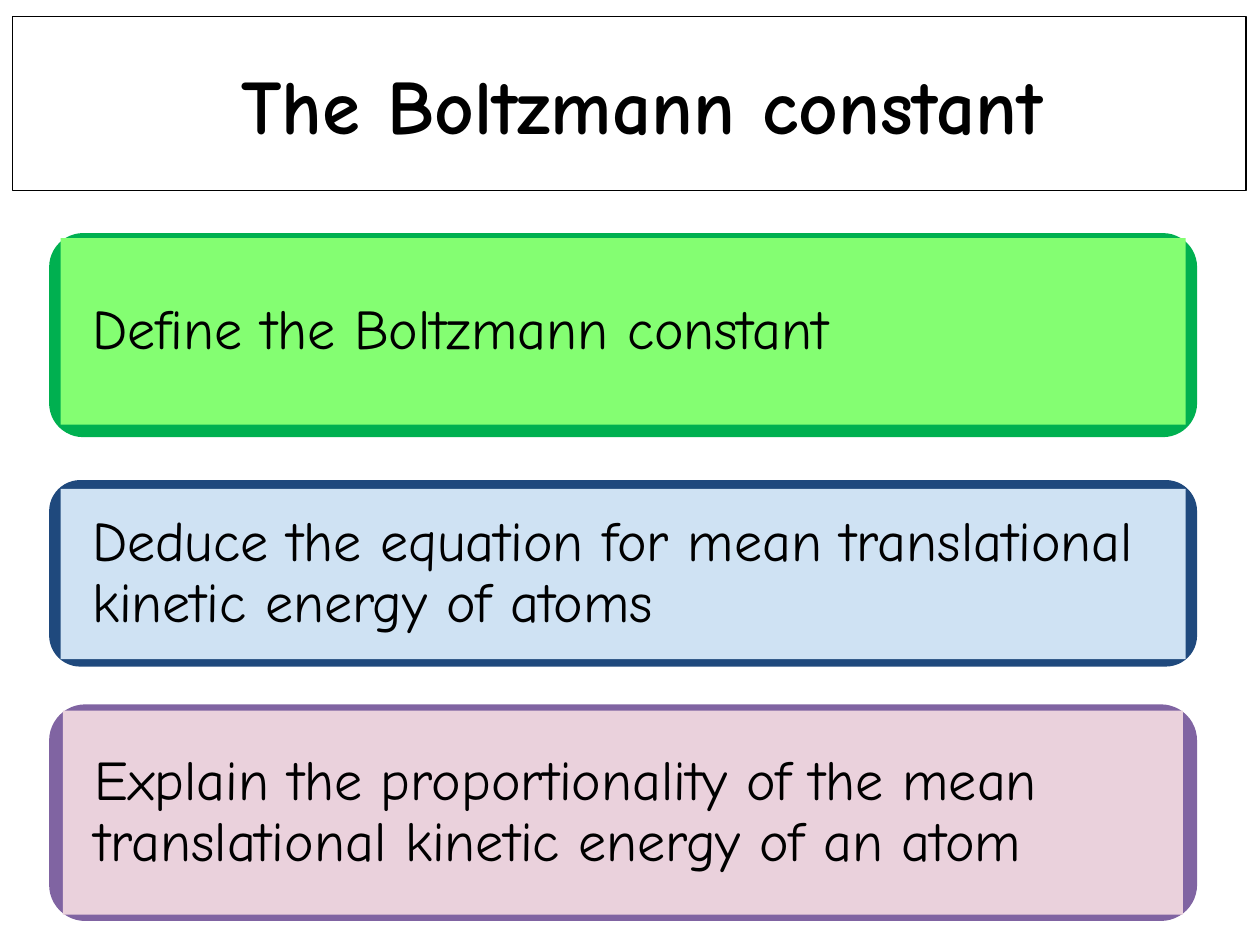
from dataclasses import dataclass

import pptx
import pptx.dml.color
import pptx.enum.shapes
import pptx.enum.text
import pptx.oxml
import pptx.oxml.ns
import pptx.util
from pptx.dml.color import RGBColor
from pptx.util import Pt

FONT = "Comic Neue"
BLACK = RGBColor(0x00, 0x00, 0x00)
WHITE = RGBColor(0xFF, 0xFF, 0xFF)
GREEN = RGBColor(0x00, 0xB0, 0x50)
LIGHT_GREEN = RGBColor(0x84, 0xFE, 0x72)
NAVY = RGBColor(0x1F, 0x49, 0x7D)
LIGHT_BLUE = RGBColor(0xCF, 0xE2, 0xF3)
PURPLE = RGBColor(0x80, 0x64, 0xA2)
PINK = RGBColor(0xEA, 0xD1, 0xDC)

FRAME_LEFT, FRAME_WIDTH = 28.1, 656
TITLE_OPACITY = 62


@dataclass(frozen=True)
class Objective:
    text: str
    frame_color: RGBColor
    panel_color: RGBColor
    frame_top: float
    frame_height: float
    panel_left: float
    panel_top: float
    panel_width: float
    panel_height: float


OBJECTIVES = [
    Objective("Define the Boltzmann constant", GREEN, LIGHT_GREEN,
              133.2, 116.6, 34.6, 136.1, 643, 106.6),
    Objective("Deduce the equation for mean translational kinetic energy of atoms",
              NAVY, LIGHT_BLUE, 274.3, 106.6, 34.6, 279.4, 643, 97.2),
    Objective("Explain the proportionality of the mean translational kinetic energy of an atom",
              PURPLE, PINK, 402.5, 123.8, 36, 406.1, 640, 116.6),
]


def add_run(paragraph, text: str, size: float, color: RGBColor, bold: bool = False) -> None:
    run = paragraph.add_run()
    run.text = text
    run.font.name = FONT
    run.font.size = Pt(size)
    run.font.bold = bold
    run.font.color.rgb = color


def add_box(slide, kind, left: float, top: float, width: float, height: float,
            color: RGBColor):
    shape = slide.shapes.add_shape(kind, Pt(left), Pt(top), Pt(width), Pt(height))
    shape.shadow.inherit = False
    shape.fill.solid()
    shape.fill.fore_color.rgb = color
    shape.line.fill.background()
    return shape


def draw_title(slide) -> None:
    title = slide.shapes.title
    title.left, title.top = Pt(7.2), Pt(9.4)
    title.width, title.height = Pt(704.9), Pt(99.4)
    title.line.color.rgb = BLACK
    title.line.width = Pt(0.75)
    title.fill.solid()
    title.fill.fore_color.rgb = WHITE
    # Translucent white fill
    color_element = title.fill._xPr.find(".//" + pptx.oxml.ns.qn("a:srgbClr"))
    alpha = pptx.oxml.parse_xml(
        f'<a:alpha {pptx.oxml.ns.nsdecls("a")} val="{TITLE_OPACITY * 1000}"/>')
    color_element.append(alpha)

    frame = title.text_frame
    frame.word_wrap = True
    frame.auto_size = pptx.enum.text.MSO_AUTO_SIZE.NONE
    frame.vertical_anchor = pptx.enum.text.MSO_ANCHOR.MIDDLE
    paragraph = frame.paragraphs[0]
    paragraph.alignment = pptx.enum.text.PP_ALIGN.CENTER
    add_run(paragraph, " ", 44, WHITE)
    add_run(paragraph, "The Boltzmann constant", 44, BLACK, bold=True)


def draw_objective(slide, objective: Objective) -> None:
    kinds = pptx.enum.shapes.MSO_SHAPE
    # Rounded frame behind the panel
    frame = add_box(slide, kinds.ROUNDED_RECTANGLE, FRAME_LEFT, objective.frame_top,
                    FRAME_WIDTH, objective.frame_height, objective.frame_color)
    frame.adjustments[0] = 0.167
    # Panel with the text
    panel = add_box(slide, kinds.RECTANGLE, objective.panel_left, objective.panel_top,
                    objective.panel_width, objective.panel_height, objective.panel_color)
    text_frame = panel.text_frame
    text_frame.word_wrap = True
    text_frame.vertical_anchor = pptx.enum.text.MSO_ANCHOR.MIDDLE
    text_frame.margin_left = text_frame.margin_right = Pt(18)
    text_frame.margin_top = text_frame.margin_bottom = Pt(0)
    paragraph = text_frame.paragraphs[0]
    paragraph.alignment = pptx.enum.text.PP_ALIGN.LEFT
    paragraph.line_spacing = 0.9
    add_run(paragraph, objective.text, 32, BLACK)


def main() -> None:
    presentation = pptx.Presentation()
    presentation.slide_width, presentation.slide_height = Pt(720), Pt(540)
    title_only = presentation.slide_layouts[5]
    slide = presentation.slides.add_slide(title_only)
    draw_title(slide)
    for objective in OBJECTIVES:
        draw_objective(slide, objective)
    presentation.save("out.pptx")


if __name__ == "__main__":
    main()
